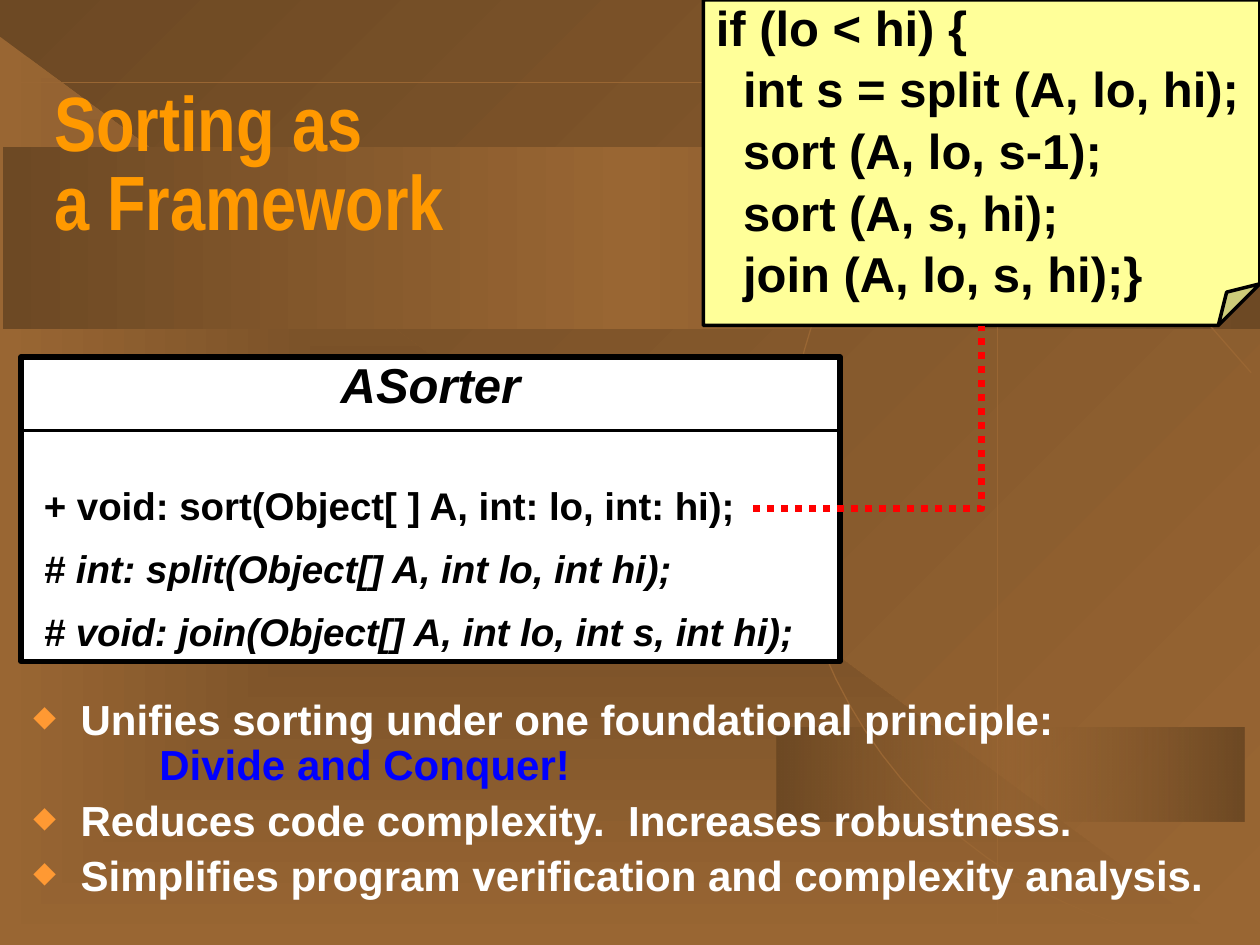
"""Build the slide that presents sorting as a framework."""
from collections import namedtuple
from dataclasses import dataclass

from lxml.etree import SubElement
from pptx import Presentation
from pptx.dml.color import RGBColor as RGB
from pptx.enum.dml import MSO_LINE
from pptx.enum.shapes import MSO_CONNECTOR as CONN, MSO_SHAPE as SHAPE
from pptx.enum.text import MSO_ANCHOR as ANCHOR, PP_ALIGN as ALIGN
from pptx.oxml.ns import qn
from pptx.util import Pt

@dataclass(frozen=True)
class Theme:
    dark: str = "6D4924"
    brown: str = "996633"
    title: str = "FF9900"
    bullet: str = "FF9933"
    accent: str = "0000FF"
    link: str = "FF0000"
    note: str = "FFFF99"
    white: str = "FFFFFF"
    black: str = "000000"
    font: str = "Arial"
    title_font: str = "Arial Narrow"
    title_size: int = 44
    head_size: int = 28
    body_size: int = 24
    method_size: int = 22

Box = namedtuple("Box", "x y w h")
Rule = namedtuple("Rule", "x1 y1 x2 y2")
Stop = namedtuple("Stop", "pos color alpha", defaults=(100,))
Style = namedtuple("Style", "size color font italic spacing", defaults=(False, 0.85))
Method = namedtuple("Method", "text width abstract")

T = Theme()
FADE = [Stop(0, T.dark), Stop(100, T.brown)]
BAND = [Stop(0, T.dark), Stop(50, T.brown), Stop(100, T.dark)]
GLOW = [Stop(0, T.dark), Stop(50, T.brown, 50), Stop(100, T.dark)]
HEAD = Style(T.head_size, T.black, T.font)
BODY = Style(T.body_size, T.white, T.font, spacing=0.9)
RULES = [Rule(715, 213, 528.5, 0), Rule(570, 0, 570, 536), Rule(0, 47, 720, 47)]
ARCS = [
    [(707.5, 0), (563.5, 7), (450.5, 126), (450.5, 270),
     (450.5, 414.5), (565, 534.5), (710, 540)],
    [(545.5, 0), (573, 71.5), (641.5, 119), (718, 120)],
]
METHODS = [
    Method("+ void: sort(Object[ ] A, int: lo, int: hi);", 412.5, False),
    Method("# int: split(Object[] A, int lo, int hi);", 376.5, True),
    Method("# void: join(Object[] A, int lo, int s, int hi);", 446.5, True),
]
CODE = ["if (lo < hi) {", "int s = split (A, lo, hi);", "sort (A, lo, s-1);",
        "sort (A, s, hi);", "join (A, lo, s, hi);}"]
POINTS = ["Unifies sorting under one foundational principle:\v\t\t",
          "Reduces code complexity.  Increases robustness.",
          "Simplifies program verification and complexity analysis."]

def gradient(fill, parent, stops: list[Stop], angle: int | None) -> None:
    fill.solid()
    grad = SubElement(parent, qn("a:gradFill"), rotWithShape="1")
    parent.replace(parent.find(qn("a:solidFill")), grad)
    gs_list = SubElement(grad, qn("a:gsLst"))
    for stop in stops:
        gs = SubElement(gs_list, qn("a:gs"), pos=str(stop.pos * 1000))
        color = SubElement(gs, qn("a:srgbClr"), val=stop.color)
        SubElement(color, qn("a:alpha"), val=str(stop.alpha * 1000))
    if angle is None:
        shade = SubElement(grad, qn("a:path"), {"path": "shape"})
        SubElement(shade, qn("a:fillToRect"), dict.fromkeys("ltrb", "50000"))
    else:
        SubElement(grad, qn("a:lin"), ang=str(angle * 60000), scaled="1")

def stroke(sp, color: str, width: float) -> None:
    sp.line.color.rgb = RGB.from_string(color)
    sp.line.width = Pt(width)

def add_shape(s, kind: SHAPE, box: Box):
    sp = s.shapes.add_shape(kind, *map(Pt, box))
    sp.shadow.inherit = False
    return sp

def add_panel(s, kind: SHAPE, box: Box, color: str, width: float):
    sp = add_shape(s, kind, box)
    sp.fill.solid()
    sp.fill.fore_color.rgb = RGB.from_string(color)
    stroke(sp, T.black, width)
    return sp

def add_backdrop(s, kind: SHAPE, box: Box, stops: list[Stop], angle: int | None) -> None:
    sp = add_shape(s, kind, box)
    gradient(sp.fill, sp._element.spPr, stops, angle)
    sp.line.fill.background()

def add_line(s, rule: Rule, color: str, width: float, kind: CONN = CONN.STRAIGHT):
    c = s.shapes.add_connector(kind, *map(Pt, rule))
    stroke(c, color, width)
    SubElement(c._element.spPr, qn("a:effectLst"))
    return c

def bezier(p0, p1, p2, p3, steps: int = 24) -> list[tuple[int, int]]:
    return [tuple(Pt((1 - t)**3 * a + 3 * (1 - t)**2 * t * b + 3 * (1 - t) * t**2 * c + t**3 * d)
                  for a, b, c, d in zip(p0, p1, p2, p3))
            for t in (i / steps for i in range(1, steps + 1))]

def add_arc(s, knots: list[tuple[float, float]]) -> None:
    builder = s.shapes.build_freeform(*map(Pt, knots[0]), scale=1.0)
    for i in range(0, len(knots) - 1, 3):
        builder.add_line_segments(bezier(*knots[i:i + 4]), close=False)
    sp = builder.convert_to_shape()
    sp.shadow.inherit = False
    sp.fill.background()
    stroke(sp, T.brown, 0.75)

def style_run(r, style: Style) -> None:
    f = r.font
    f.size, f.name, f.bold, f.italic = Pt(style.size), style.font, True, style.italic
    f.color.rgb = RGB.from_string(style.color)

def write(sp, lines: list[str], style: Style, wrap: bool = True, before: float = 0.24,
          anchor: ANCHOR = ANCHOR.TOP, align: ALIGN = ALIGN.LEFT):
    tf = sp.text_frame
    tf.text = "\n".join(lines)
    tf.word_wrap, tf.vertical_anchor = wrap, anchor
    for p in tf.paragraphs:
        p.alignment, p.line_spacing = align, style.spacing
        p.space_before = Pt(round(before * style.size, 1))
        for r in p.runs:
            style_run(r, style)
    return tf

def add_text(s, box: Box, lines: list[str], style: Style, **options):
    sp = s.shapes.add_textbox(*map(Pt, box))
    write(sp, lines, style, **options)
    return sp

def indent(p, left: float, first: float = 0):
    pPr = p._p.get_or_add_pPr()
    pPr.set("marL", str(Pt(left)))
    pPr.set("indent", str(Pt(first)))
    return pPr

def add_bullet(p) -> None:
    pPr = indent(p, 27, -27)
    SubElement(SubElement(pPr, qn("a:buClr")), qn("a:srgbClr"), val=T.bullet)
    SubElement(pPr, qn("a:buSzPct"), val="70000")
    SubElement(pPr, qn("a:buChar"), char="◆")

def main() -> None:
    prs = Presentation()
    prs.slide_width, prs.slide_height = Pt(720), Pt(540)
    s = prs.slides.add_slide(prs.slide_layouts[6])
    fill = s.background.fill
    gradient(fill, s._element.cSld.find(qn("p:bg")).find(qn("p:bgPr")), FADE, 45)
    add_backdrop(s, SHAPE.RIGHT_TRIANGLE, Box(0, 21, 702, 519), FADE, None)
    add_backdrop(s, SHAPE.RECTANGLE, Box(444, 415.5, 267, 54), GLOW, 0)
    add_backdrop(s, SHAPE.RECTANGLE, Box(1.5, 84, 718.5, 104), BAND, 0)
    for knots in ARCS:
        add_arc(s, knots)
    for rule in RULES:
        add_line(s, rule, T.brown, 0.75)

    add_text(s, Box(24, 48, 324, 96), ["Sorting as\va Framework"],
             Style(T.title_size, T.title, T.title_font), before=0, anchor=ANCHOR.BOTTOM)
    body = add_text(s, Box(12, 396, 696, 130), POINTS, BODY).text_frame
    for p in body.paragraphs:
        add_bullet(p)
    r = body.paragraphs[0].add_run()
    r.text = "Divide and Conquer!"
    style_run(r, BODY._replace(color=T.accent))

    sorter = add_panel(s, SHAPE.RECTANGLE, Box(12, 204, 468, 174), T.white, 3)
    write(sorter, ["ASorter"], HEAD._replace(italic=True), align=ALIGN.CENTER)
    add_line(s, Rule(12, 246, 480, 246), T.black, 2)
    methods = [add_text(s, Box(18, 276 + 36 * i, m.width, 29.5), [m.text],
                        Style(T.method_size, T.black, T.font, m.abstract), wrap=False)
               for i, m in enumerate(METHODS)]

    note = add_panel(s, SHAPE.FOLDED_CORNER, Box(402, 0, 318, 186), T.note, 2)
    guides = note._element.spPr.find(qn("a:prstGeom")).find(qn("a:avLst"))
    SubElement(guides, qn("a:gd"), name="adj", fmla="val 12800")
    for p in write(note, CODE, HEAD).paragraphs[1:]:
        indent(p, 15.6)
    link = add_line(s, Rule(430.5, 291, 561, 186), T.link, 4, CONN.ELBOW)
    link.line.dash_style = MSO_LINE.ROUND_DOT
    link._element.spPr.find(qn("a:prstGeom")).set("prst", "bentConnector2")
    link.begin_connect(methods[0], 3)
    link.end_connect(note, 2)
    prs.save("out.pptx")

if __name__ == "__main__":
    main()
